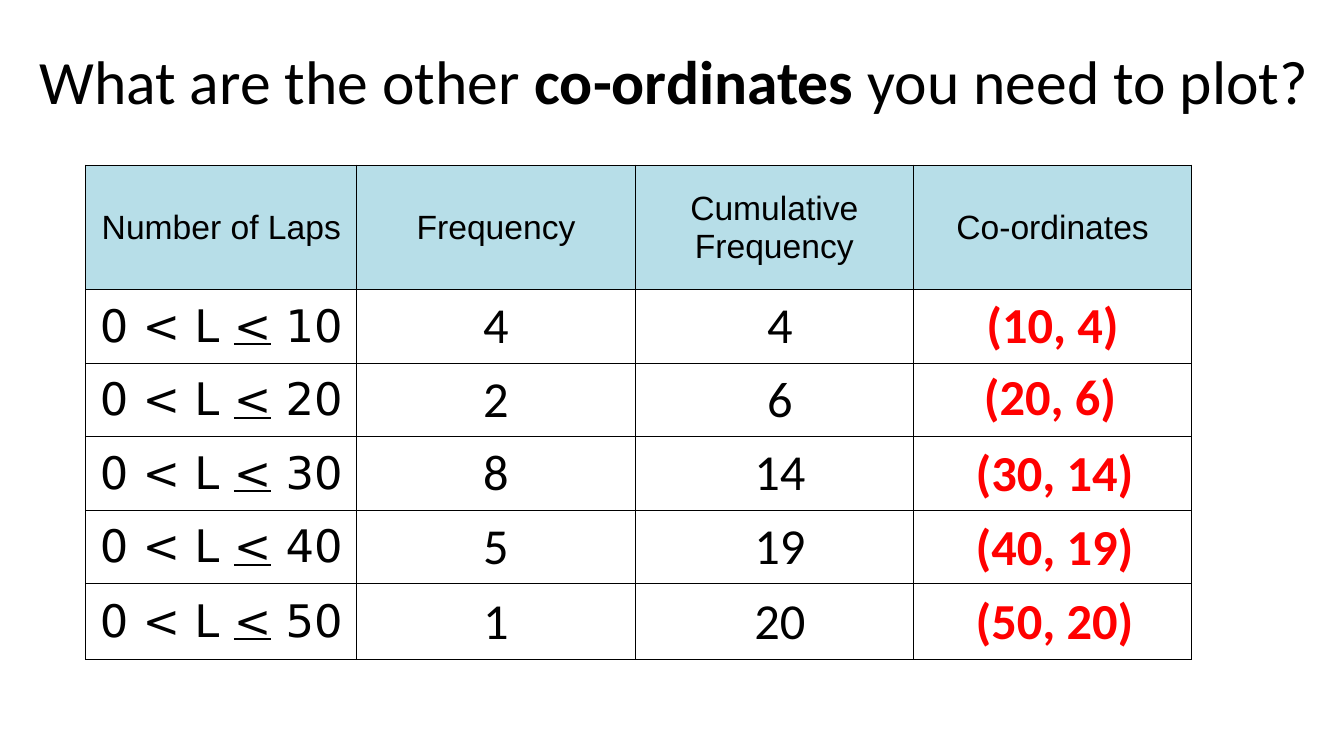
from itertools import accumulate

from lxml.etree import SubElement
from pptx import Presentation
from pptx.dml.color import RGBColor
from pptx.enum.text import MSO_ANCHOR as ANCHOR, MSO_AUTO_SIZE as AUTO, PP_ALIGN as ALIGN
from pptx.oxml.ns import qn
from pptx.util import Inches, Pt

BLACK = RGBColor(0x00, 0x00, 0x00)
WHITE = RGBColor(0xFF, 0xFF, 0xFF)
RED = RGBColor(0xFF, 0x00, 0x00)
PALE_BLUE = RGBColor(0xB7, 0xDE, 0xE8)

TITLE = {"size": Pt(44), "name": "Calibri", "bold": False}
HEADER = {"size": Pt(24), "name": "Arial", "bold": False}
RANGE = {"size": Pt(32), "name": "DejaVu Sans", "bold": False}
NUMBER = {"size": Pt(36), "name": "Calibri", "bold": False}
ANSWER = {"size": Pt(36), "name": "Calibri", "bold": True}

HEADINGS = ["Number of Laps", "Frequency", "Cumulative Frequency", "Co-ordinates"]
LIMITS = [10, 20, 30, 40, 50]
FREQUENCIES = [4, 2, 8, 5, 1]
TOTALS = list(accumulate(FREQUENCIES))
ANSWERS = [f"({limit}, {total})" for limit, total in zip(LIMITS, TOTALS)]
COL_WIDTHS = [2.69, 2.76, 2.76, 2.76]
ROW_HEIGHTS = [1.23, 0.73, 0.73, 0.73, 0.73, 0.75]


def write(tf, texts, style, color=BLACK, **emphasis):
    p = tf.paragraphs[0]
    p.alignment = ALIGN.CENTER
    for i, text in enumerate(texts):
        r = p.add_run()
        r.text = text
        values = {**style, **emphasis} if i == 1 else style
        for name, value in values.items():
            setattr(r.font, name, value)
        r.font.color.rgb = color


def set_border(cell, side, width):
    ln = SubElement(cell._tc.get_or_add_tcPr(), qn(f"a:ln{side}"), w=str(Pt(width)))
    fill = SubElement(ln, qn("a:solidFill"))
    SubElement(fill, qn("a:srgbClr"), val=str(BLACK))


def format_cell(cell, row, last):
    top = 1 if row < 2 else 0.5
    bottom = 1 if row in (0, last) else 0.5
    for side, width in {"L": 1, "R": 1, "T": top, "B": bottom}.items():
        set_border(cell, side, width)
    cell.fill.solid()
    cell.fill.fore_color.rgb = WHITE if row else PALE_BLUE
    layout = {"margin_left": Inches(0.01), "margin_right": Inches(0.01),
              "margin_top": Inches(0.01), "margin_bottom": 0,
              "vertical_anchor": ANCHOR.MIDDLE}
    for name, value in layout.items():
        setattr(cell, name, value)


def add_title(s, left, top, width, height):
    sp = s.shapes.title
    box = {"left": left, "top": top, "width": width, "height": height}
    for name, value in box.items():
        setattr(sp, name, Inches(value))
    tf = sp.text_frame
    tf.auto_size = AUTO.NONE
    tf.word_wrap = True
    write(tf, ["What are the other ", "co-ordinates", " you need to plot?"], TITLE, bold=True)


def add_laps_table(s, left, top):
    box = [Inches(v) for v in (left, top, sum(COL_WIDTHS), sum(ROW_HEIGHTS))]
    table = s.shapes.add_table(len(ROW_HEIGHTS), len(COL_WIDTHS), *box).table
    table.horz_banding = False
    for column, width in zip(table.columns, COL_WIDTHS):
        column.width = Inches(width)
    for i, (row, height) in enumerate(zip(table.rows, ROW_HEIGHTS)):
        row.height = Inches(height)
        for cell in row.cells:
            format_cell(cell, i, len(ROW_HEIGHTS) - 1)
    for col, heading in enumerate(HEADINGS):
        write(table.cell(0, col).text_frame, [heading], HEADER)
    for i, (limit, count, total) in enumerate(zip(LIMITS, FREQUENCIES, TOTALS), 1):
        write(table.cell(i, 0).text_frame, ["0 < L ", "<", f" {limit}"], RANGE, underline=True)
        write(table.cell(i, 1).text_frame, [str(count)], NUMBER)
        write(table.cell(i, 2).text_frame, [f" {total}"], NUMBER)
    write(table.cell(1, 3).text_frame, ANSWERS[:1], ANSWER, RED)


def add_answer(s, text, left, top, width, height=0.71):
    sp = s.shapes.add_textbox(*[Inches(v) for v in (left, top, width, height)])
    tf = sp.text_frame
    tf.word_wrap = False
    tf.auto_size = AUTO.SHAPE_TO_FIT_TEXT
    write(tf, [text], ANSWER, RED)


def add_answers(s, left, top, step):
    add_answer(s, ANSWERS[1], left + 0.08, top, 1.53)
    for i, text in enumerate(ANSWERS[2:], 1):
        add_answer(s, text, left, top + 0.03 + i * step, 1.78)


def main():
    prs = Presentation()
    prs.slide_width, prs.slide_height = Inches(13.33), Inches(7.5)
    s = prs.slides.add_slide(prs.slide_layouts[5])
    add_title(s, 0.1, 0.37, 13.17, 0.84)
    add_laps_table(s, 0.85, 1.64)
    add_answers(s, 9.57, 3.57, 0.73)
    prs.save("out.pptx")


if __name__ == "__main__":
    main()
